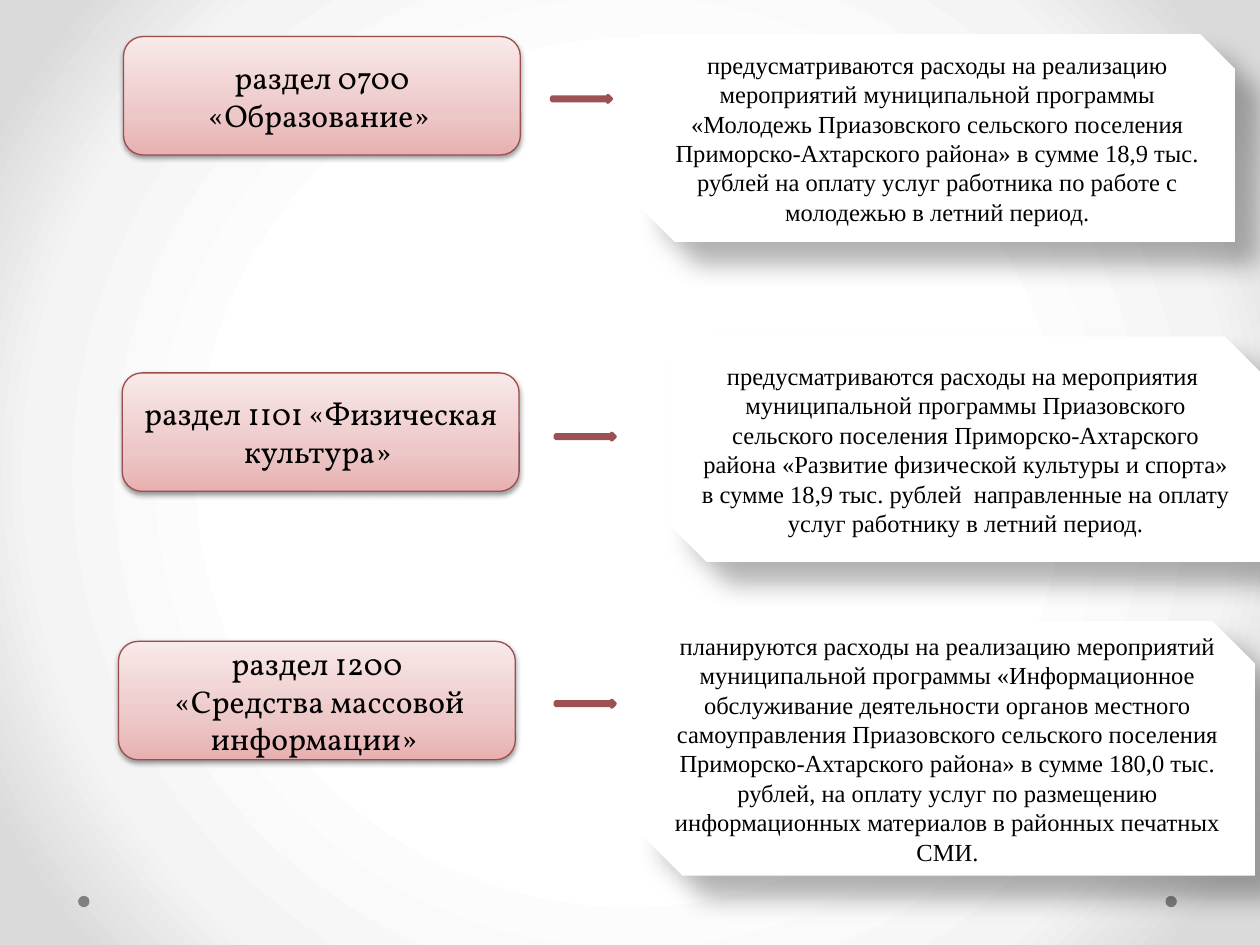
from pptx import Presentation, util as u
from pptx.dml import color
from pptx.enum import shapes, text
from pptx.oxml import parse_xml
from pptx.oxml.ns import nsdecls, qn

COLUMNS, ROWS = 100, 75
CELL = u.Inches(0.1)

SECTIONS = [
    {
        "card": (9.8, 2.9, 31.5, 9.4),
        "arrow": (43.8, 7.6, 4.7, 0.5),
        "note": (50.8, 2.7, 47.2, 16.5),
        "title": ["раздел 0700 «Образование» "],
        "details": "предусматриваются расходы на реализацию мероприятий муниципальной "
                   "программы «Молодежь Приазовского сельского поселения "
                   "Приморско-Ахтарского района» в сумме 18,9 тыс. рублей на оплату "
                   "услуг работника по работе с молодежью в летний период.",
    },
    {
        "card": (9.7, 29.6, 31.5, 9.4),
        "arrow": (44.1, 34.4, 4.7, 0.5),
        "note": (53.1, 26.7, 47.1, 17.9),
        "title": ["раздел 1101 «Физическая культура» "],
        "details": "предусматриваются расходы на мероприятия  муниципальной программы "
                   "Приазовского сельского поселения Приморско-Ахтарского района "
                   "«Развитие физической культуры и спорта» в сумме 18,9 тыс. рублей  "
                   "направленные на оплату услуг работнику в летний период.",
    },
    {
        "card": (9.4, 50.9, 31.5, 9.4),
        "arrow": (44.1, 55.6, 4.7, 0.5),
        "note": (50.8, 49.3, 48.8, 20.2),
        "title": ["раздел 1200", " «Средства массовой информации» "],
        "details": "планируются расходы на реализацию мероприятий муниципальной программы "
                   "«Информационное обслуживание деятельности органов местного "
                   "самоуправления Приазовского сельского поселения "
                   "Приморско-Ахтарского района» в сумме 180,0 тыс. рублей, на оплату "
                   "услуг по размещению информационных материалов в районных печатных СМИ.",
    },
]


def rgb(value):
    return color.RGBColor.from_string(value)


def set_gradient(fill, owner, stops, direction):
    fill.gradient()
    gradient = next(owner.iter(qn("a:gradFill")))
    stop_xml = "".join(
        f'<a:gs pos="{position * 1000}"><a:srgbClr val="{value}"/></a:gs>'
        for position, value in stops
    )
    gradient.getparent().replace(gradient, parse_xml(
        f'<a:gradFill {nsdecls("a")} rotWithShape="1">'
        f"<a:gsLst>{stop_xml}</a:gsLst>{direction}</a:gradFill>"
    ))


def add_shadow(shape, alpha, blur, distance, angle):
    effects = shape._element.spPr.find(qn("a:effectLst"))
    effects.append(parse_xml(
        f'<a:outerShdw {nsdecls("a")} blurRad="{u.Pt(blur)}" dist="{u.Pt(distance)}" '
        f'dir="{angle * 60000}" algn="tl" rotWithShape="0">'
        f'<a:srgbClr val="000000"><a:alpha val="{alpha * 1000}"/></a:srgbClr></a:outerShdw>'
    ))


def add_figure(slide, kind, box, fill, line=None, width=1):
    shape = slide.shapes.add_shape(kind, *(round(cells * CELL) for cells in box))
    shape.shadow.inherit = False
    shape.fill.solid()
    shape.fill.fore_color.rgb = rgb(fill)
    if line:
        shape.line.color.rgb = rgb(line)
        shape.line.width = u.Pt(width)
    else:
        shape.line.fill.background()
    return shape


def write(shape, lines, font, size):
    frame = shape.text_frame
    frame.word_wrap = True
    frame.vertical_anchor = text.MSO_ANCHOR.MIDDLE
    for index, line in enumerate(lines):
        paragraph = frame.add_paragraph() if index else frame.paragraphs[0]
        paragraph.alignment = text.PP_ALIGN.CENTER
        run = paragraph.add_run()
        run.text = line
        run.font.name = font
        run.font.size = u.Pt(size)
        run.font.color.rgb = rgb("000000")


def add_card(slide, box, lines):
    card = add_figure(slide, shapes.MSO_SHAPE.ROUNDED_RECTANGLE, box, "EDC8C8", "9A4E4E", 0.75)
    set_gradient(card.fill, card._element.spPr,
                 [(0, "E8B0B0"), (35, "EDC8C8"), (100, "F9E9E9")],
                 '<a:lin ang="16200000" scaled="1"/>')
    add_shadow(card, 38, 3.1, 1.6, 90)
    write(card, lines, "Vollkorn", 18)


def add_note(slide, box, details):
    note = add_figure(slide, shapes.MSO_SHAPE.SNIP_2_DIAG_RECTANGLE, box, "FFFFFF")
    add_shadow(note, 30, 15, 18, 45)
    write(note, [details], "Times New Roman", 14)


def add_section(slide, section):
    add_card(slide, section["card"], section["title"])
    add_note(slide, section["note"], section["details"])
    add_figure(slide, shapes.MSO_SHAPE.RIGHT_ARROW, section["arrow"], "FFFFFF", "9C5252", 2.25)


def add_backdrop(slide):
    set_gradient(slide.background.fill, slide._element,
                 [(0, "FFFFFF"), (50, "FFFFFF"), (76, "F4F4F4"), (92, "DADADA"), (100, "DADADA")],
                 '<a:path path="circle"><a:fillToRect l="50000" t="50000" '
                 'r="50000" b="50000"/></a:path>')
    for left in (92.5, 6.2):
        add_figure(slide, shapes.MSO_SHAPE.OVAL, (left, 71.1, 0.9, 0.9), "808080")


def main():
    presentation = Presentation()
    presentation.slide_width = COLUMNS * CELL
    presentation.slide_height = ROWS * CELL
    slide = presentation.slides.add_slide(presentation.slide_layouts[6])
    add_backdrop(slide)
    for section in SECTIONS:
        add_section(slide, section)
    presentation.save("out.pptx")


if __name__ == "__main__":
    main()
